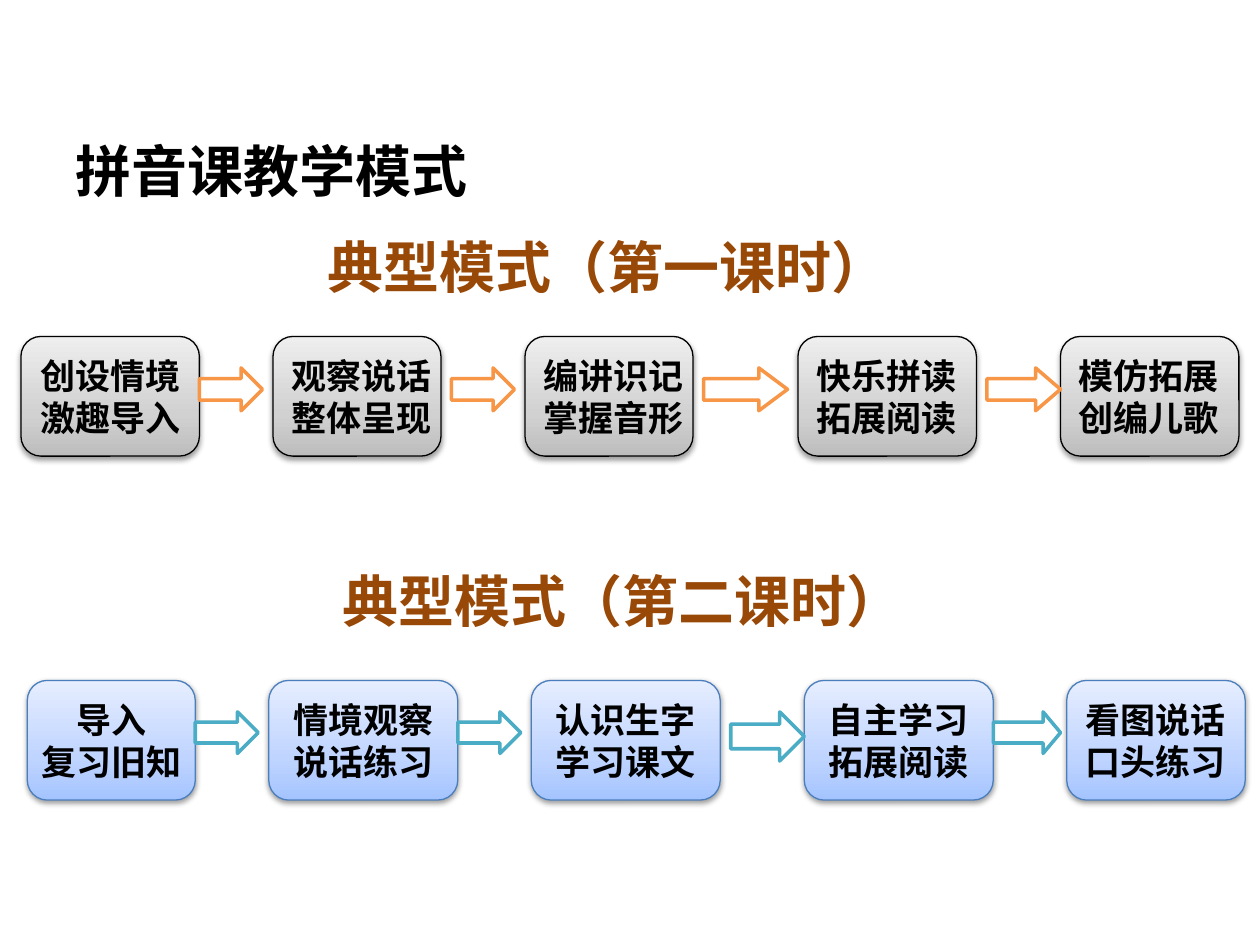
from lxml import etree
from pptx import Presentation, util as u
from pptx.dml.color import RGBColor
from pptx.enum import shapes, text
from pptx.oxml import ns, parse_xml

COLORS = {
    "ink": "000000", "heading": "984807", "white": "FFFFFF",
    "gray line": "000000", "orange": "F79646",
    "blue line": "4B7EBC", "teal": "4BACC6",
}
GRADIENTS = {
    "gray": ((0, "BDBDBD"), (35, "D1D1D1"), (100, "EEEEEE")),
    "blue": ((0, "A4C4FF"), (35, "BFD4FF"), (100, "E6EEFF")),
}
FONT = "Noto Sans CJK SC"
COLUMN = 1 / 12  # the slide is 120 columns wide
LEFT, CENTER = text.PP_ALIGN.LEFT, text.PP_ALIGN.CENTER

# Steps: first column, columns wide, alignment, lines
# Arrows: first column, columns wide, height in inches, head length
LESSON_ONE = {
    "steps": [
        (2, 17, CENTER, ("创设情境", "激趣导入")),
        (26, 16, LEFT, ("观察说话", "整体呈现")),
        (50, 16, LEFT, ("编讲识记", "掌握音形")),
        (76, 17, LEFT, ("快乐拼读", "拓展阅读")),
        (101, 17, LEFT, ("模仿拓展", "创编儿歌")),
    ],
    "arrows": [(19, 6, 0.34, 0.5), (43, 6, 0.34, 0.5),
               (67, 8, 0.34, 0.67), (94, 7, 0.34, 0.58)],
}
LESSON_TWO = {
    "steps": [
        (2, 16, CENTER, ("导入", "复习旧知")),
        (25, 18, CENTER, ("情境观察", "说话练习")),
        (50, 18, CENTER, ("认识生字", "学习课文")),
        (76, 18, CENTER, ("自主学习", "拓展阅读")),
        (101, 17, CENTER, ("看图说话", "口头练习")),
    ],
    "arrows": [(18, 6, 0.33, 0.5), (43, 6, 0.33, 0.5),
               (69, 7, 0.39, 0.5), (94, 6.4, 0.33, 0.42)],
}


def inches(*lengths):
    return [u.Inches(length) for length in lengths]


def rgb(name):
    return RGBColor.from_string(COLORS[name])


def add_span(para, words, size, color):
    span = para.add_run()
    span.text = words
    font = span.font
    font.name, font.size, font.bold = FONT, u.Pt(size), True
    font.color.rgb = rgb(color)
    east_asian = etree.SubElement(font._element, ns.qn("a:ea"))
    east_asian.set("typeface", FONT)


def add_title(page, words):
    box = page.shapes.add_textbox(*inches(0.5, 0.84, 9, 1.02))
    frame = box.text_frame
    frame.word_wrap = True
    frame.vertical_anchor = text.MSO_ANCHOR.MIDDLE
    add_span(frame.paragraphs[0], words, 32, "ink")


def add_heading(page, left, top, words):
    box = page.shapes.add_textbox(*inches(left, top, 9.25, 0.5))
    box.text_frame.word_wrap = True
    para = box.text_frame.paragraphs[0]
    para.alignment, para.line_spacing = CENTER, 0.9
    para._p.get_or_add_pPr().set("marL", str(u.Inches(0.4)))
    add_span(para, words, 32, "heading")


def add_gradient_and_shadow(shape, stops):
    """Shade upwards from the first stop and cast a soft shadow below."""
    marks = "".join(
        f'<a:gs pos="{share * 1000}"><a:srgbClr val="{color}"/></a:gs>'
        for share, color in stops)
    properties = shape._element.spPr
    line = properties.find(ns.qn("a:ln"))
    line.addprevious(parse_xml(
        f'<a:gradFill {ns.nsdecls("a")} rotWithShape="1"><a:gsLst>{marks}</a:gsLst>'
        '<a:lin ang="16200000" scaled="0"/></a:gradFill>'))
    effects = properties.find(ns.qn("a:effectLst"))
    effects.append(parse_xml(
        f'<a:outerShdw {ns.nsdecls("a")} blurRad="40000" dist="20000" '
        'dir="5400000" rotWithShape="0"><a:srgbClr val="000000">'
        '<a:alpha val="38000"/></a:srgbClr></a:outerShdw>'))


def add_step(page, place, palette, alignment, lines):
    shape = page.shapes.add_shape(
        shapes.MSO_SHAPE.ROUNDED_RECTANGLE, *inches(*place))
    shape.shadow.inherit = False
    shape.line.color.rgb = rgb(f"{palette} line")
    shape.line.width = u.Pt(0.75)
    add_gradient_and_shadow(shape, GRADIENTS[palette])
    frame = shape.text_frame
    frame.word_wrap = False
    frame.vertical_anchor = text.MSO_ANCHOR.MIDDLE
    for index, words in enumerate(lines):
        para = frame.add_paragraph() if index else frame.paragraphs[0]
        para.alignment = alignment
        add_span(para, words, 20, "ink")


def add_arrow(page, place, color, head):
    arrow = page.shapes.add_shape(shapes.MSO_SHAPE.RIGHT_ARROW, *inches(*place))
    arrow.shadow.inherit = False
    arrow.adjustments[1] = head
    arrow.fill.solid()
    arrow.fill.fore_color.rgb = rgb("white")
    arrow.line.color.rgb = rgb(color)
    arrow.line.width = u.Pt(2)


def add_flow(page, lesson, left, top, palette, arrow_color):
    for column, width, alignment, lines in lesson["steps"]:
        place = (left + column * COLUMN, top, width * COLUMN, 0.95)
        add_step(page, place, palette, alignment, lines)
    for column, width, height, head in lesson["arrows"]:
        place = (left + column * COLUMN, top + 0.25, width * COLUMN, height)
        add_arrow(page, place, arrow_color, head)


def main():
    deck = Presentation()
    deck.slide_width, deck.slide_height = inches(10, 7.5)
    page = deck.slides.add_slide(deck.slide_layouts[6])
    add_title(page, "拼音课教学模式")
    add_heading(page, 0, 1.86, "典型模式（第一课时）")
    add_flow(page, LESSON_ONE, 0, 2.67, "gray", "orange")
    add_heading(page, 0.12, 4.51, "典型模式（第二课时）")
    add_flow(page, LESSON_TWO, 0.05, 5.4, "blue", "teal")
    deck.save("out.pptx")


if __name__ == "__main__":
    main()
